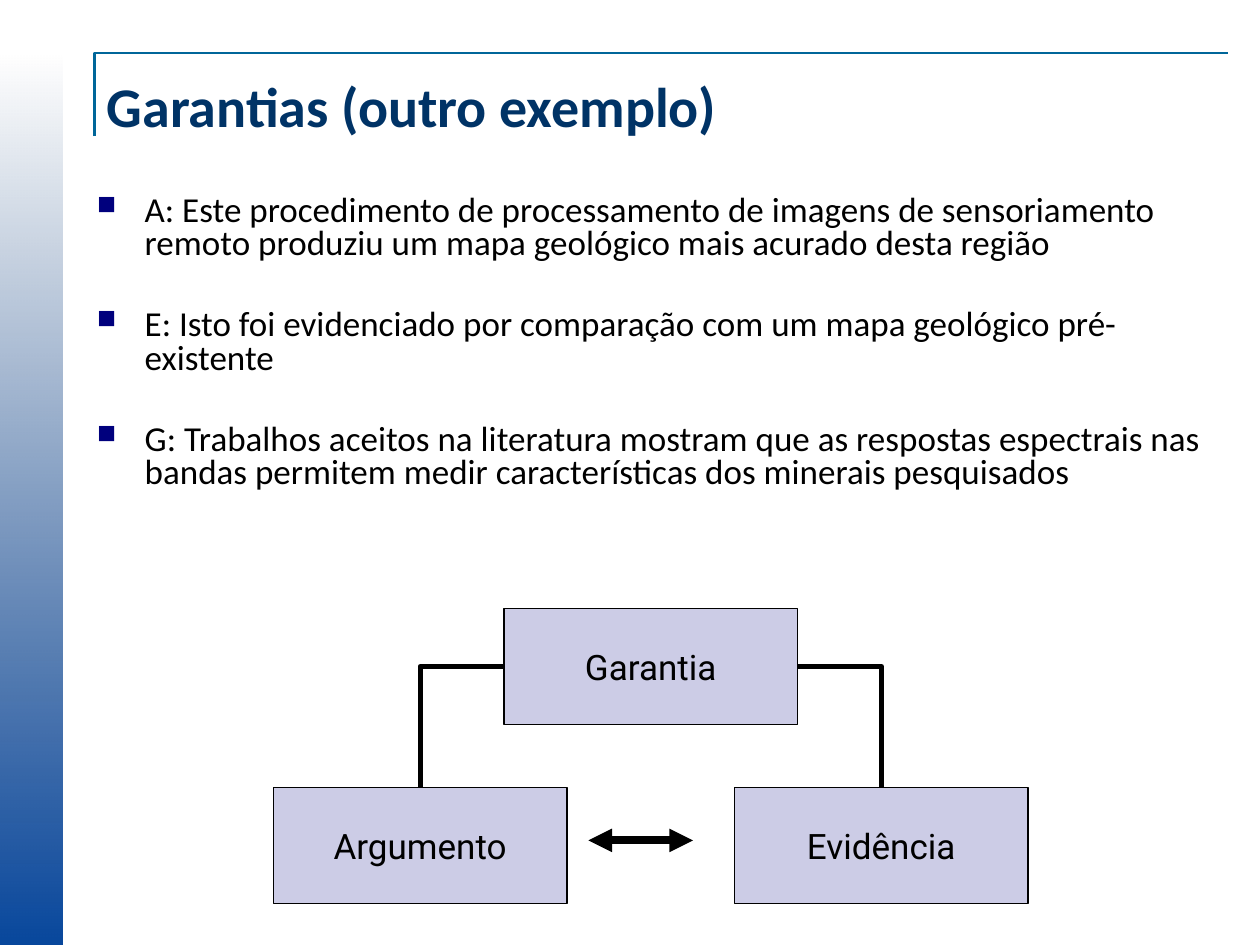
from lxml import etree
from pptx import Presentation
from pptx.dml.color import RGBColor
from pptx.enum import shapes, text
from pptx.oxml.ns import qn
from pptx.util import Inches, Pt


def color(code):
    return RGBColor.from_string(code)


def write(frame, words, size=20, font="Calibri", fill="000000", bold=False,
          align="LEFT", anchor="TOP", wrap=True, gap=0, lead=1.0, mark=None):
    """Fill a text frame, one paragraph per item of words."""
    frame.word_wrap = wrap
    frame.vertical_anchor = getattr(text.MSO_ANCHOR, anchor)
    for i, line in enumerate(words):
        para = frame.paragraphs[0] if i == 0 else frame.add_paragraph()
        para.alignment = getattr(text.PP_ALIGN, align)
        para.line_spacing = lead
        para.space_before = Pt(gap if i else 0)
        if mark:
            props = para._p.get_or_add_pPr()
            props.set("marL", str(Inches(0.38)))
            props.set("indent", str(-Inches(0.38)))
            tint = etree.SubElement(props, qn("a:buClr"))
            etree.SubElement(tint, qn("a:srgbClr"), val=mark)
            etree.SubElement(props, qn("a:buSzPct"), val="75000")
            etree.SubElement(props, qn("a:buChar"), char="■")
        run = para.add_run()
        run.text = line
        run.font.size = Pt(size)
        run.font.name = font
        run.font.bold = bold
        run.font.color.rgb = color(fill)


def link(kind, start, end, width):
    """Add a black connector without a shadow."""
    line = items.add_connector(getattr(shapes.MSO_CONNECTOR, kind),
                               *(Inches(n) for n in start + end))
    line.line.color.rgb = color("000000")
    line.line.width = Pt(width)
    etree.SubElement(line._element.spPr, qn("a:effectLst"))
    return line


deck = Presentation()
deck.slide_width, deck.slide_height = Inches(10), Inches(7.5)
slide = deck.slides.add_slide(deck.slide_layouts[6])
items = slide.shapes

# Side bar, fading out towards the top
bar = items.add_shape(shapes.MSO_SHAPE.RECTANGLE, Inches(0), Inches(0.42),
                      Inches(0.5), Inches(7.08))
bar.shadow.inherit = False
bar.line.fill.background()
bar.fill.gradient()
bar.fill.gradient_angle = 90
for stop, code in zip(bar.fill.gradient_stops, ("08479C", "063370")):
    stop.color.rgb = color(code)
stop.position = 1
clear = bar._element.spPr.findall(".//" + qn("a:srgbClr"))[-1]
etree.SubElement(clear, qn("a:alpha"), val="0")

# Title rule
pen = items.build_freeform(Inches(0.75), Inches(1.08))
pen.add_line_segments([(Inches(0.75), Inches(0.42)),
                       (Inches(9.75), Inches(0.42))], close=False)
rule = pen.convert_to_shape()
rule.shadow.inherit = False
rule.fill.background()
rule.line.color.rgb = color("006699")
rule.line.width = Pt(1.5)

# Title and bullets
title = items.add_textbox(Inches(0.75), Inches(0.42), Inches(8.92), Inches(0.83))
write(title.text_frame, ["Garantias (outro exemplo)"], size=32,
      fill="003366", bold=True, anchor="MIDDLE")
body = items.add_textbox(Inches(0.67), Inches(1.5), Inches(9.08), Inches(3.2))
write(body.text_frame, [
    "A: Este procedimento de processamento de imagens de sensoriamento remoto "
    "produziu um mapa geológico mais acurado desta região",
    "E: Isto foi evidenciado por comparação com um mapa geológico pré-existente",
    "G: Trabalhos aceitos na literatura mostram que as respostas espectrais nas "
    "bandas permitem medir características dos minerais pesquisados",
], gap=27, lead=0.8, mark="00007D")

# Diagram boxes
boxes = {}
for name, left, top in (("Argumento", 2.17, 6.25), ("Evidência", 5.83, 6.25),
                        ("Garantia", 4, 4.83)):
    box = items.add_shape(shapes.MSO_SHAPE.RECTANGLE, Inches(left), Inches(top),
                          Inches(2.33), Inches(0.92))
    box.shadow.inherit = False
    box.fill.solid()
    box.fill.fore_color.rgb = color("CCCCE6")
    box.line.color.rgb = color("000000")
    box.line.width = Pt(0.75)
    write(box.text_frame, [name], font="Roboto", align="CENTER",
          anchor="MIDDLE", wrap=False)
    boxes[name] = box

# Elbows from the sides of the top box to the tops of the lower ones
for name, side, start, end in (("Argumento", 1, (4, 5.29), (3.33, 6.25)),
                               ("Evidência", 3, (6.33, 5.29), (7, 6.25))):
    elbow = link("ELBOW", start, end, 3)
    elbow._element.spPr.find(qn("a:prstGeom")).set("prst", "bentConnector2")
    elbow.begin_connect(boxes["Garantia"], side)
    elbow.end_connect(boxes[name], 0)

# Double arrow
arrow = link("STRAIGHT", (4.67, 6.67), (5.5, 6.67), 4.5)
for tip in ("a:headEnd", "a:tailEnd"):
    etree.SubElement(arrow.line._get_or_add_ln(), qn(tip), type="triangle")

deck.save("out.pptx")
